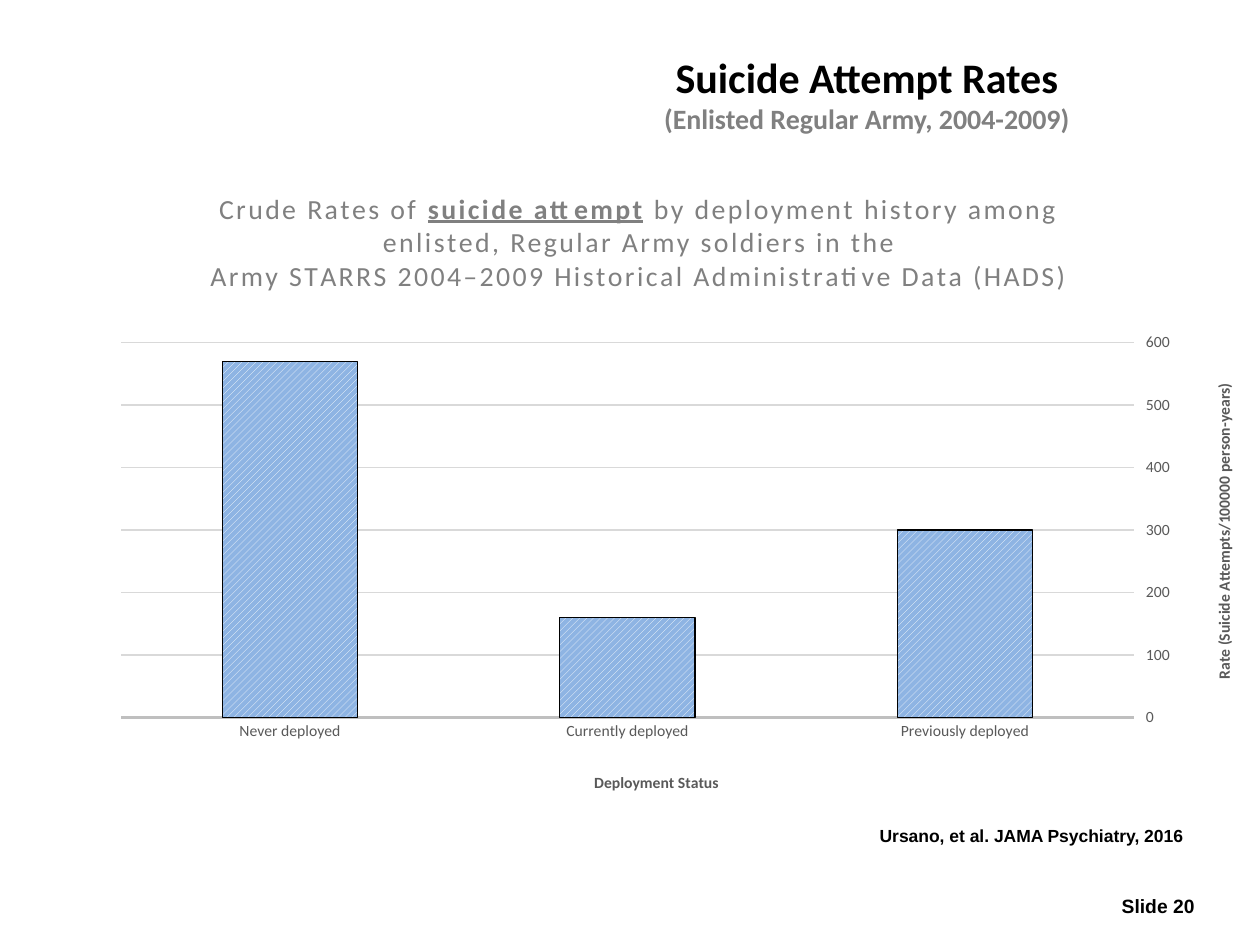
"""Build the slide on suicide attempt rates by deployment history."""
from dataclasses import dataclass

import pptx
import pptx.chart.data
import pptx.dml.color
import pptx.enum.chart
import pptx.enum.dml
import pptx.enum.shapes
import pptx.enum.text
import pptx.oxml
import pptx.oxml.ns
import pptx.util

Inches = pptx.util.Inches
Pt = pptx.util.Pt
Align = pptx.enum.text.PP_ALIGN
Anchor = pptx.enum.text.MSO_ANCHOR
GREY = "808080"
AXIS_GREY = "595959"


@dataclass
class Line:
    text: str
    size: float
    color: str = "000000"


@dataclass
class Label:
    left: float
    top: float
    width: float
    height: float
    font: str
    align: Align
    lines: list[Line]
    anchor: Anchor = Anchor.MIDDLE


def rgb(color: str) -> pptx.dml.color.RGBColor:
    return pptx.dml.color.RGBColor.from_string(color)


def style(font, size: float, color: str, bold: bool, name: str = "Calibri") -> None:
    font.size, font.bold, font.name = Pt(size), bold, name
    font.color.rgb = rgb(color)


def bounds(label: Label) -> list[pptx.util.Length]:
    return [Inches(n) for n in (label.left, label.top, label.width, label.height)]


def write(shape, label: Label) -> None:
    frame = shape.text_frame
    frame.word_wrap = True
    frame.vertical_anchor = label.anchor
    for index, line in enumerate(label.lines):
        paragraph = frame.add_paragraph() if index else frame.paragraphs[0]
        paragraph.text = line.text
        paragraph.alignment = label.align
        style(paragraph.font, line.size, line.color, True, label.font)


def draw_citation(slide, label: Label) -> None:
    panel = slide.shapes.add_shape(pptx.enum.shapes.MSO_SHAPE.RECTANGLE, *bounds(label))
    panel.shadow.inherit = False
    panel.fill.solid()
    panel.fill.fore_color.rgb = rgb("FFFFFF")
    panel.line.fill.background()
    write(panel, label)
    panel.text_frame.margin_left = Inches(0.07)
    panel.text_frame.margin_right = Inches(0.13)


def draw_chart_title(chart) -> None:
    frame = chart.chart_title.text_frame
    first = frame.paragraphs[0]
    second = frame.add_paragraph()
    for paragraph, text, emphasis in (
        (first, "Crude Rates of ", False),
        (first, "suicide attempt", True),
        (first, " by deployment history among enlisted, Regular Army soldiers in the", False),
        (second, "Army STARRS 2004–2009 Historical Administrative Data (HADS)", False),
    ):
        run = paragraph.add_run()
        run.text = text
        style(run.font, 16, GREY, emphasis)
        run.font.underline = emphasis
        run._r.get_or_add_rPr().set("spc", "150")
    chart.chart_title.include_in_layout = False


def manual_layout(target: str = "", **places: float):
    inner = f'<c:layoutTarget val="{target}"/>' if target else ""
    sizes = "".join(f'<c:{tag} val="{value}"/>' for tag, value in places.items())
    return pptx.oxml.parse_xml(
        f'<c:layout {pptx.oxml.ns.nsdecls("c")}><c:manualLayout>{inner}'
        f'<c:xMode val="edge"/><c:yMode val="edge"/>{sizes}</c:manualLayout></c:layout>')


def drop_layout(element) -> None:
    for old in element.findall(pptx.oxml.ns.qn("c:layout")):
        element.remove(old)


def style_axis(axis, title: str, x: float, y: float) -> None:
    axis.has_title = True
    axis.axis_title.text_frame.text = title
    style(axis.axis_title.text_frame.paragraphs[0].font, 9, AXIS_GREY, True)
    heading = axis.axis_title._element
    drop_layout(heading)
    heading.find(pptx.oxml.ns.qn("c:tx")).addnext(manual_layout(x=x, y=y))
    style(axis.tick_labels.font, 9, AXIS_GREY, False)
    axis.major_tick_mark = axis.minor_tick_mark = pptx.enum.chart.XL_TICK_MARK.NONE


def draw_rates(slide) -> None:
    data = pptx.chart.data.CategoryChartData()
    data.categories = ["Never deployed", "Currently deployed", "Previously deployed"]
    data.add_series("Series 1", [570, 160, 300])
    chart = slide.shapes.add_chart(
        pptx.enum.chart.XL_CHART_TYPE.COLUMN_CLUSTERED,
        Inches(0.36), Inches(1.33), Inches(9.47), Inches(5), data).chart
    style(chart.font, 10, "000000", False)
    chart.has_legend = False
    draw_chart_title(chart)

    status, rate = chart.category_axis, chart.value_axis
    style_axis(status, "Deployment Status", 0.46, 0.964)
    style_axis(rate, "Rate (Suicide Attempts/100000 person-years)", 0.982, 0.342)
    status.crosses = pptx.enum.chart.XL_AXIS_CROSSES.MAXIMUM
    status.format.line.color.rgb = rgb("BFBFBF")
    status.format.line.width = Pt(1.5)
    rate.tick_label_position = pptx.enum.chart.XL_TICK_LABEL_POSITION.HIGH
    rate.minimum_scale, rate.maximum_scale, rate.major_unit = 0, 600, 100
    rate.format.line.fill.background()
    rate.major_gridlines.format.line.color.rgb = rgb("D9D9D9")
    rate.major_gridlines.format.line.width = Pt(0.75)

    plot = chart.plots[0]
    plot.gap_width = 150
    plot.vary_by_categories = False
    bars = plot.series[0].format
    bars.fill.patterned()
    bars.fill.pattern = pptx.enum.dml.MSO_PATTERN.WIDE_UPWARD_DIAGONAL
    bars.fill.fore_color.rgb = rgb("FFFFFF")
    bars.fill.back_color.rgb = rgb("8EB4E3")
    bars.line.color.rgb = rgb("000000")
    bars.line.width = Pt(0.75)
    plot_area = chart._chartSpace.chart.plotArea
    drop_layout(plot_area)
    plot_area.insert(0, manual_layout("inner", x=0.064, y=0.28, w=0.853, h=0.6))


def main() -> None:
    deck = pptx.Presentation()
    deck.slide_width, deck.slide_height = Inches(10), Inches(7.5)
    slide = deck.slides.add_slide(deck.slide_layouts[6])
    number = Label(6.5, 7.05, 3.08, 0.29, "Arial", Align.RIGHT,
                   [Line("Slide 20", 11)], Anchor.TOP)
    heading = Label(4.67, 0.16, 4.42, 1.16, "Calibri", Align.CENTER, [
        Line("Suicide Attempt Rates", 24),
        Line("(Enlisted Regular Army, 2004-2009)", 16, GREY)])
    citation = Label(6.88, 6.5, 2.67, 0.27, "Arial", Align.CENTER,
                     [Line("Ursano, et al. JAMA Psychiatry, 2016", 10)])
    for label in (number, heading):
        write(slide.shapes.add_textbox(*bounds(label)), label)
    draw_rates(slide)
    draw_citation(slide, citation)
    deck.save("out.pptx")


if __name__ == "__main__":
    main()
